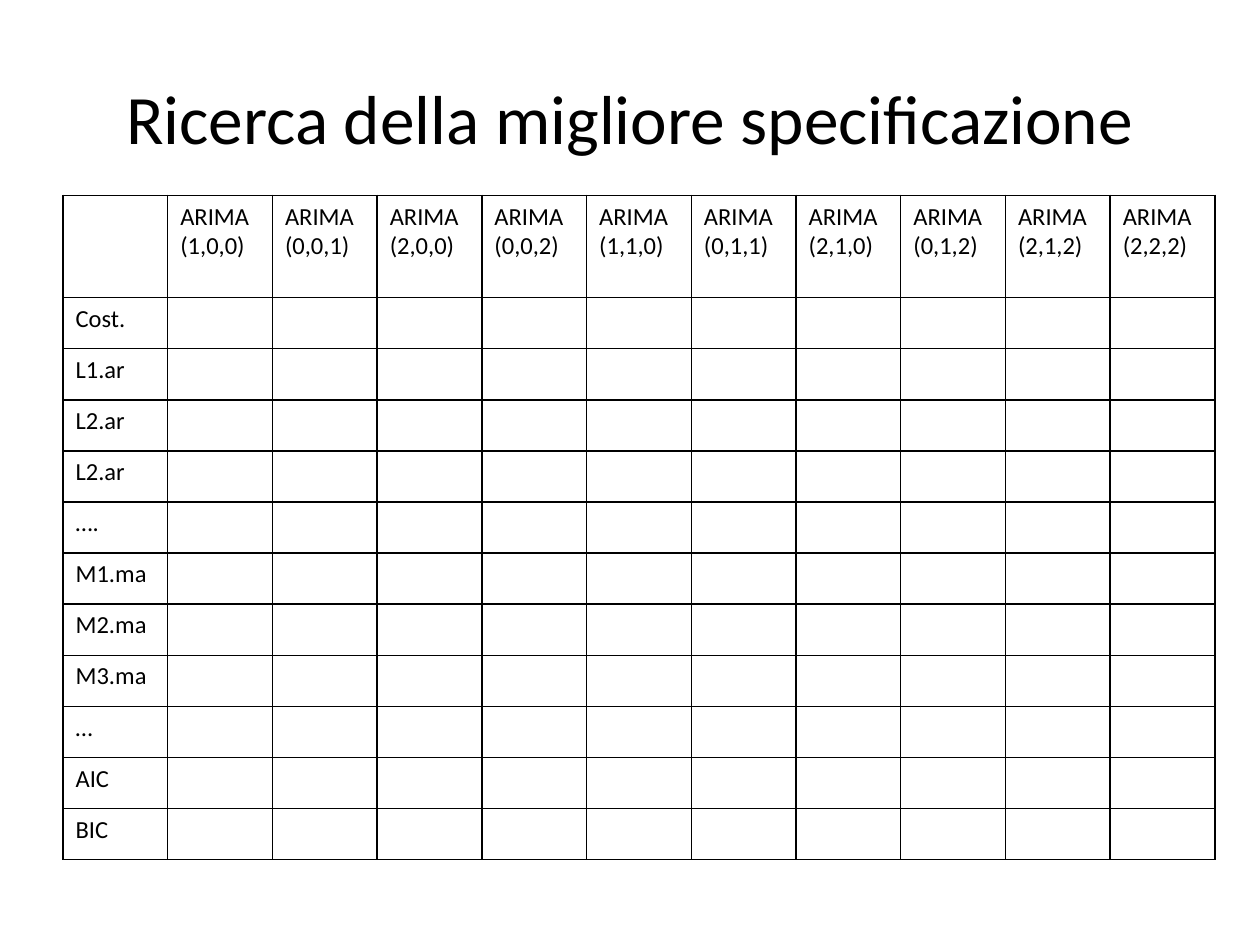
"""Build a slide with an empty comparison table of ARIMA specifications."""
from dataclasses import dataclass

from lxml.etree import SubElement
from pptx import Presentation
from pptx.dml.color import RGBColor
from pptx.enum.text import MSO_ANCHOR, MSO_AUTO_SIZE, PP_ALIGN
from pptx.oxml.ns import qn
from pptx.util import Cm, Pt

TITLE = "Ricerca della migliore specificazione"
ORDERS = ["(1,0,0)", "(0,0,1)", "(2,0,0)", "(0,0,2)", "(1,1,0)",
          "(0,1,1)", "(2,1,0)", "(0,1,2)", "(2,1,2)", "(2,2,2)"]
LABELS = ["Cost.", "L1.ar", "L2.ar", "L2.ar", "….", "M1.ma",
          "M2.ma", "M3.ma", "…", "AIC", "BIC"]


@dataclass(frozen=True)
class Theme:
    font: str = "Calibri"
    ink: str = "000000"
    title_size: float = 39.6
    cell_size: float = 14
    border: float = 1


THEME = Theme()
LEFT, TITLE_TOP, TITLE_WIDTH, TITLE_HEIGHT = Cm(1.27), Cm(0.76), Cm(22.86), Cm(3.18)
TABLE_TOP, TABLE_WIDTH = Cm(3.94), Cm(23.23)
HEADER_HEIGHT, ROW_HEIGHT = Cm(2.06), Cm(1.03)


def format_text(frame, size):
    for paragraph in frame.paragraphs:
        font = paragraph.font
        font.name = THEME.font
        font.size = Pt(size)
        font.bold = False
        font.color.rgb = RGBColor.from_string(THEME.ink)


def add_borders(cell):
    properties = cell._tc.get_or_add_tcPr()
    for side in ("lnL", "lnR", "lnT", "lnB"):
        line = SubElement(properties, qn(f"a:{side}"), w=str(Pt(THEME.border)))
        fill = SubElement(line, qn("a:solidFill"))
        SubElement(fill, qn("a:srgbClr"), val=THEME.ink)


def add_title(page):
    box = page.shapes.title
    box.left, box.top, box.width, box.height = LEFT, TITLE_TOP, TITLE_WIDTH, TITLE_HEIGHT
    frame = box.text_frame
    frame.text = TITLE
    frame.auto_size = MSO_AUTO_SIZE.NONE
    frame.vertical_anchor = MSO_ANCHOR.MIDDLE
    frame.paragraphs[0].alignment = PP_ALIGN.CENTER
    format_text(frame, THEME.title_size)


def add_specifications(page):
    header = [""] + [f"ARIMA\n{order}" for order in ORDERS]
    rows = [header] + [[label] + [""] * len(ORDERS) for label in LABELS]
    height = HEADER_HEIGHT + ROW_HEIGHT * len(LABELS)
    table = page.shapes.add_table(
        len(rows), len(header), LEFT, TABLE_TOP, TABLE_WIDTH, height).table
    table.first_row = table.horz_banding = False
    for column in table.columns:
        column.width = TABLE_WIDTH // len(header)
    for index, (row, texts) in enumerate(zip(table.rows, rows)):
        row.height = ROW_HEIGHT if index else HEADER_HEIGHT
        for cell, text in zip(row.cells, texts):
            cell.text = text
            format_text(cell.text_frame, THEME.cell_size)
            add_borders(cell)
            cell.fill.background()


def main():
    deck = Presentation()
    deck.slide_width, deck.slide_height = Cm(25.4), Cm(19.05)
    page = deck.slides.add_slide(deck.slide_layouts.get_by_name("Title Only"))
    add_title(page)
    add_specifications(page)
    deck.save("out.pptx")


if __name__ == "__main__":
    main()
